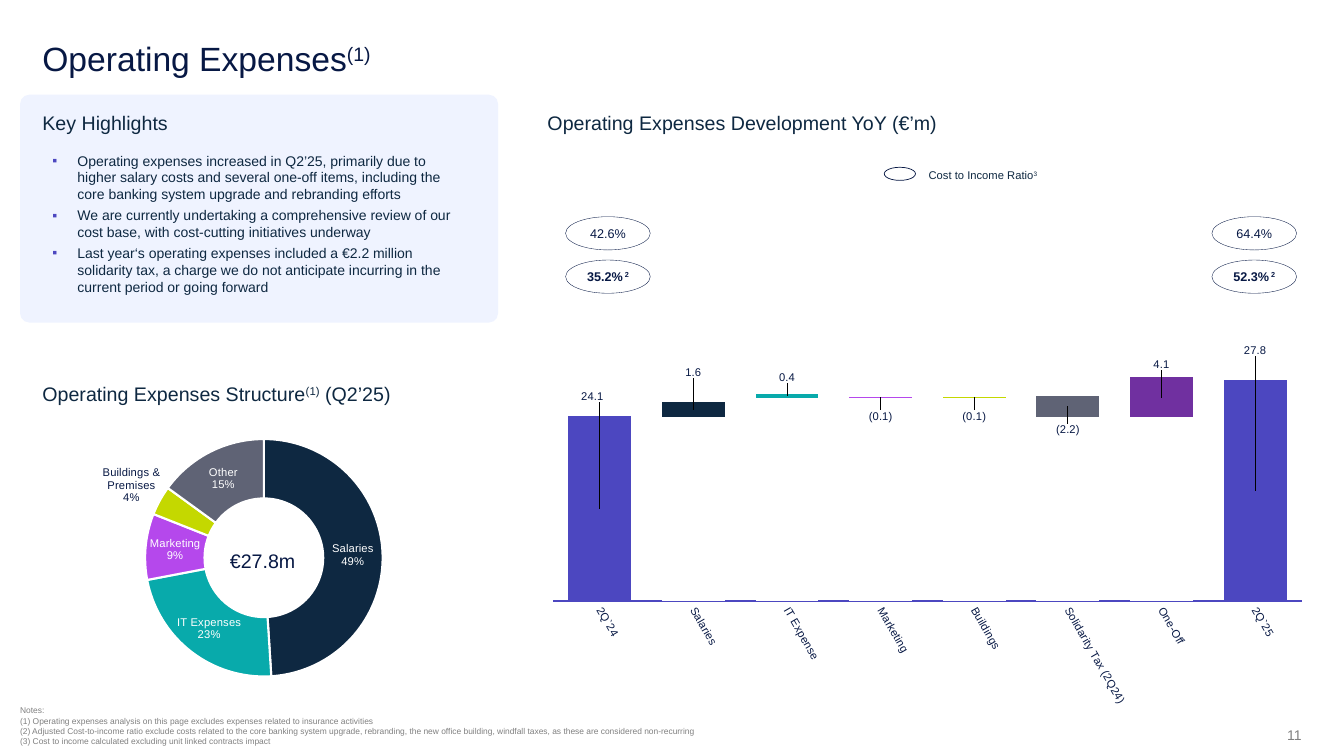
import pptx
import pptx.chart.data
import pptx.dml.color
import pptx.enum.chart
import pptx.enum.shapes
import pptx.enum.text
import pptx.oxml
import pptx.oxml.ns
import pptx.util

Inches, Pt = pptx.util.Inches, pptx.util.Pt
RGB = pptx.dml.color.RGBColor
ALIGN, ANCHOR = pptx.enum.text.PP_ALIGN, pptx.enum.text.MSO_ANCHOR
SHAPE, CHART = pptx.enum.shapes.MSO_SHAPE, pptx.enum.chart.XL_CHART_TYPE
qn = pptx.oxml.ns.qn

FONT = "Arial"
NAVY, INK = RGB(0x07, 0x18, 0x44), RGB(0x0E, 0x28, 0x41)
INDIGO, PALE = RGB(0x4C, 0x47, 0xC0), RGB(0xEF, 0xF3, 0xFF)
TEAL, VIOLET = RGB(0x08, 0xAA, 0xAB), RGB(0xB5, 0x48, 0xEC)
LIME, SLATE = RGB(0xC4, 0xD8, 0x00), RGB(0x5F, 0x63, 0x75)
PURPLE, GRAY = RGB(0x70, 0x30, 0xA0), RGB(0x80, 0x80, 0x80)
WHITE = RGB(0xFF, 0xFF, 0xFF)

# Each paragraph is a list of runs; a leading "^" marks superscript.
TITLE = ["Operating Expenses", "^(1)"]
HEADINGS = [
    (0.42, 1.1, ["Key Highlights"]),
    (5.43, 1.1, ["Operating Expenses Development YoY (€’m)"]),
    (0.42, 3.79, ["Operating Expenses Structure", "^(1)", " (Q2’25)"]),
]
HIGHLIGHTS = [
    ["Operating expenses increased in Q2’25, primarily due to higher salary costs and several one-off items, "
     "including the core banking system upgrade and rebranding efforts"],
    ["We are currently undertaking a comprehensive review of our cost base, with cost-cutting initiatives underway"],
    ["Last year‘s operating expenses included a €2.2 million solidarity tax, a charge we do not anticipate "
     "incurring in the current period or going forward"],
]
NOTES = [
    ["Notes:"],
    ["(1) Operating expenses analysis on this page excludes expenses related to insurance activities"],
    ["(2) Adjusted Cost-to-income ratio exclude costs related to the core banking system upgrade, rebranding, "
     "the new office building, windfall taxes, as these are considered non-recurring"],
    ["(3) Cost to income calculated excluding unit linked contracts impact"],
]
RATIOS = [(5.61, ["42.6%"], ["35.2%", "^ 2"]), (12.02, ["64.4%"], ["52.3%", "^ 2"])]
STRUCTURE = [
    ("Salaries", 49, INK),
    ("IT Expenses", 23, TEAL),
    ("Marketing", 9, VIOLET),
    ("Buildings & Premises", 4, LIME),
    ("Other", 15, SLATE),
]
STEPS = ["2Q`24", "Salaries", "IT Expense", "Marketing", "Buildings", "Solidarity Tax (2Q24)", "One-Off", "2Q`25"]
BASE = [None, 24, 26, 26, 26, 24, 24, None]
# Per series: number format, then {step: (value, colour, label shift x, label shift y)}
BRIDGE = [
    ("\\(#,##0.0\\)", {3: (0.1, VIOLET, 0, 0.04), 4: (0.1, LIME, 0, 0.04), 5: (2.2, SLATE, 0, 0.05)}),
    ("0.0", {1: (1.6, INK, 0, -0.08), 2: (0.4, TEAL, 0, -0.04), 6: (4.1, PURPLE, 0, -0.07)}),
    ("0.0", {0: (24.1, INDIGO, -0.01, -0.24), 7: (27.8, INDIGO, 0, -0.3)}),
]


def style(font, size, color, bold=False):
    font.name, font.size, font.bold = FONT, Pt(size), bold
    font.color.rgb = color


def write(s, paras, size, color, bold=False, align=ALIGN.LEFT, anchor=ANCHOR.TOP, insets=(0, 0, 0, 0)):
    tf = s.text_frame
    tf.word_wrap, tf.vertical_anchor = True, anchor
    tf.margin_left, tf.margin_top, tf.margin_right, tf.margin_bottom = map(Inches, insets)
    for i, runs in enumerate(paras):
        p = tf.add_paragraph() if i else tf.paragraphs[0]
        p.alignment = align
        for text in runs:
            r = p.add_run()
            r.text = text.removeprefix("^")
            style(r.font, size, color, bold)
            if text.startswith("^"):
                r.font._element.set("baseline", "30000")
    return tf


def text(x, y, w, h, paras, size, color, **kw):
    return write(sl.shapes.add_textbox(Inches(x), Inches(y), Inches(w), Inches(h)), paras, size, color, **kw)


def shape(kind, x, y, w, h, fill, line=None):
    s = sl.shapes.add_shape(kind, Inches(x), Inches(y), Inches(w), Inches(h))
    s.shadow.inherit = False
    s.fill.solid()
    s.fill.fore_color.rgb = fill
    if line:
        s.line.color.rgb, s.line.width = NAVY, Pt(line)
    else:
        s.line.fill.background()
    return s


def layout(inner="", **box):
    parts = "".join(f'<c:{k} val="{v}"/>' for k, v in box.items())
    return pptx.oxml.parse_xml(
        f'<c:layout {pptx.oxml.ns.nsdecls("c")}><c:manualLayout>{inner}{parts}</c:manualLayout></c:layout>')


def chart(kind, x, y, w, h, data, color, plot_box):
    ch = sl.shapes.add_chart(kind, Inches(x), Inches(y), Inches(w), Inches(h), data).chart
    ch.has_legend = ch.has_title = False
    style(ch.font, 8, color)
    area = ch._chartSpace.chart.plotArea
    for old in area.findall(qn("c:layout")):
        area.remove(old)
    inner = '<c:layoutTarget val="inner"/><c:xMode val="edge"/><c:yMode val="edge"/>'
    area.insert(0, layout(inner, **dict(zip("xywh", plot_box))))
    return ch


def paint(fmt, color):
    fmt.fill.solid()
    fmt.fill.fore_color.rgb = color


def shift_label(point, dx, dy):
    label = point.data_label
    style(label.font, 8, NAVY)
    d = label._get_or_add_dLbl()
    d.insert(1, layout(x=dx, y=dy))
    return d


prs = pptx.Presentation()
prs.slide_width, prs.slide_height = Inches(13.33), Inches(7.5)
sl = prs.slides.add_slide(prs.slide_layouts[6])

shape(SHAPE.ROUNDED_RECTANGLE, 0.2, 0.94, 4.74, 2.26, PALE).adjustments[0] = 0.04
text(0.42, 0.42, 9.58, 0.36, [TITLE], 24, NAVY).paragraphs[0].line_spacing = 0.9
text(0.2, 7, 7.3, 0.5, NOTES, 6, GRAY)
for x, y, runs in HEADINGS:
    text(x, y, 5.61, 0.36, [runs], 14, INK, insets=(0, 0, 0, 0.2))

tf = text(0.42, 1.46, 4.25, 1.65, HIGHLIGHTS, 10, INK, insets=(0.1, 0.05, 0.1, 0.05))
for i, p in enumerate(tf.paragraphs):
    pPr = p._p.get_or_add_pPr()
    pPr.set("marL", str(Inches(0.25)))
    pPr.set("indent", str(-Inches(0.25)))
    ns = pptx.oxml.ns.nsdecls("a")
    for xml in (f'<a:buClr {ns}><a:srgbClr val="{INDIGO}"/></a:buClr>', f'<a:buFont {ns} typeface="{FONT}"/>',
                f'<a:buChar {ns} char="▪"/>'):
        pPr.append(pptx.oxml.parse_xml(xml))
    if i:
        p.space_before = Pt(3)

cd = pptx.chart.data.CategoryChartData()
cd.categories = [name for name, _, _ in STRUCTURE]
cd.add_series("Series 1", [share for _, share, _ in STRUCTURE])
ch = chart(CHART.DOUGHNUT, 0.95, 4.06, 3.17, 2.96, cd, WHITE, (0.052, 0.1, 0.948, 0.796))
ch._chartSpace.xpath(".//c:holeSize")[0].set("val", "45")
ser = ch.plots[0].series[0]
labels = ser.data_labels
labels.show_value, labels.show_category_name, labels.show_percentage = False, True, True
style(labels.font, 8, WHITE)
for i, (_, _, color) in enumerate(STRUCTURE):
    pt = ser.points[i]
    paint(pt.format, color)
    pt.format.line.color.rgb, pt.format.line.width = WHITE, Pt(1.5)
d = shift_label(ser.points[3], -0.17, -0.1)
for tag, val in (("showVal", "0"), ("showCatName", "1"), ("showPercent", "1")):
    d.find(qn("c:" + tag)).set("val", val)
for holder in (d, labels._element):
    sep = pptx.oxml.parse_xml(f'<c:separator {pptx.oxml.ns.nsdecls("c")}>\n</c:separator>')
    (holder.find(qn("c:showBubbleSize")) if holder.find(qn("c:showBubbleSize")) is not None
     else holder.find(qn("c:showPercent"))).addnext(sep)
text(2.25, 5.45, 0.71, 0.3, [["€27.8m"]], 14, NAVY, align=ALIGN.CENTER)

cd = pptx.chart.data.CategoryChartData()
cd.categories = STEPS
cd.add_series("Series 1", BASE)
for n, (_, bars) in enumerate(BRIDGE, 2):
    cd.add_series(f"Series {n}", [bars[i][0] if i in bars else None for i in range(len(STEPS))])
ch = chart(CHART.COLUMN_STACKED, 5.47, 2.71, 7.45, 4.64, cd, NAVY, (0.002, 0.018, 0.998, 0.683))
plot = ch.plots[0]
plot.gap_width, plot.overlap, plot.vary_by_categories = 49, 100, False
paint(plot.series[0].format, WHITE)
for ser, (fmt, bars) in zip(list(plot.series)[1:], BRIDGE):
    labels = ser.data_labels
    labels.show_value, labels.position = True, pptx.enum.chart.XL_LABEL_POSITION.CENTER
    labels.number_format, labels.number_format_is_linked = fmt, False
    style(labels.font, 8, NAVY)
    paint(ser.format, next(iter(bars.values()))[1])
    for i, (_, color, dx, dy) in bars.items():
        paint(ser.points[i].format, color)
        d = shift_label(ser.points[i], dx, dy)
        d.insert(2, pptx.oxml.parse_xml(
            f'<c:numFmt {pptx.oxml.ns.nsdecls("c")} formatCode="{fmt}" sourceLinked="0"/>'))
        ser.points[i].data_label.position = pptx.enum.chart.XL_LABEL_POSITION.CENTER
val, cat = ch.value_axis, ch.category_axis
val.minimum_scale, val.maximum_scale = 5, 38
val.has_major_gridlines = val.visible = False
cat.major_tick_mark = pptx.enum.chart.XL_TICK_MARK.NONE
cat.format.line.color.rgb, cat.format.line.width = INDIGO, Pt(1)
style(cat.tick_labels.font, 8, NAVY)
cat._element.find(qn("c:txPr")).find(qn("a:bodyPr")).set("rot", "3600000")

for x, reported, adjusted in RATIOS:
    for y, runs, bold in ((2.15, reported, False), (2.58, adjusted, True)):
        write(shape(SHAPE.OVAL, x, y, 0.84, 0.33, WHITE, 0.25), [runs], 9, NAVY, bold=bold,
              align=ALIGN.CENTER, anchor=ANCHOR.MIDDLE, insets=(0, 0.05, 0, 0.05))
shape(SHAPE.OVAL, 8.77, 1.66, 0.31, 0.13, WHITE, 0.5)
text(9.21, 1.67, 1.81, 0.18, [["Cost to Income Ratio", "^3"]], 8, INK)
text(9.9, 7.08, 3.01, 0.42, [["11"]], 10, GRAY, align=ALIGN.RIGHT, anchor=ANCHOR.MIDDLE)

prs.save("out.pptx")
